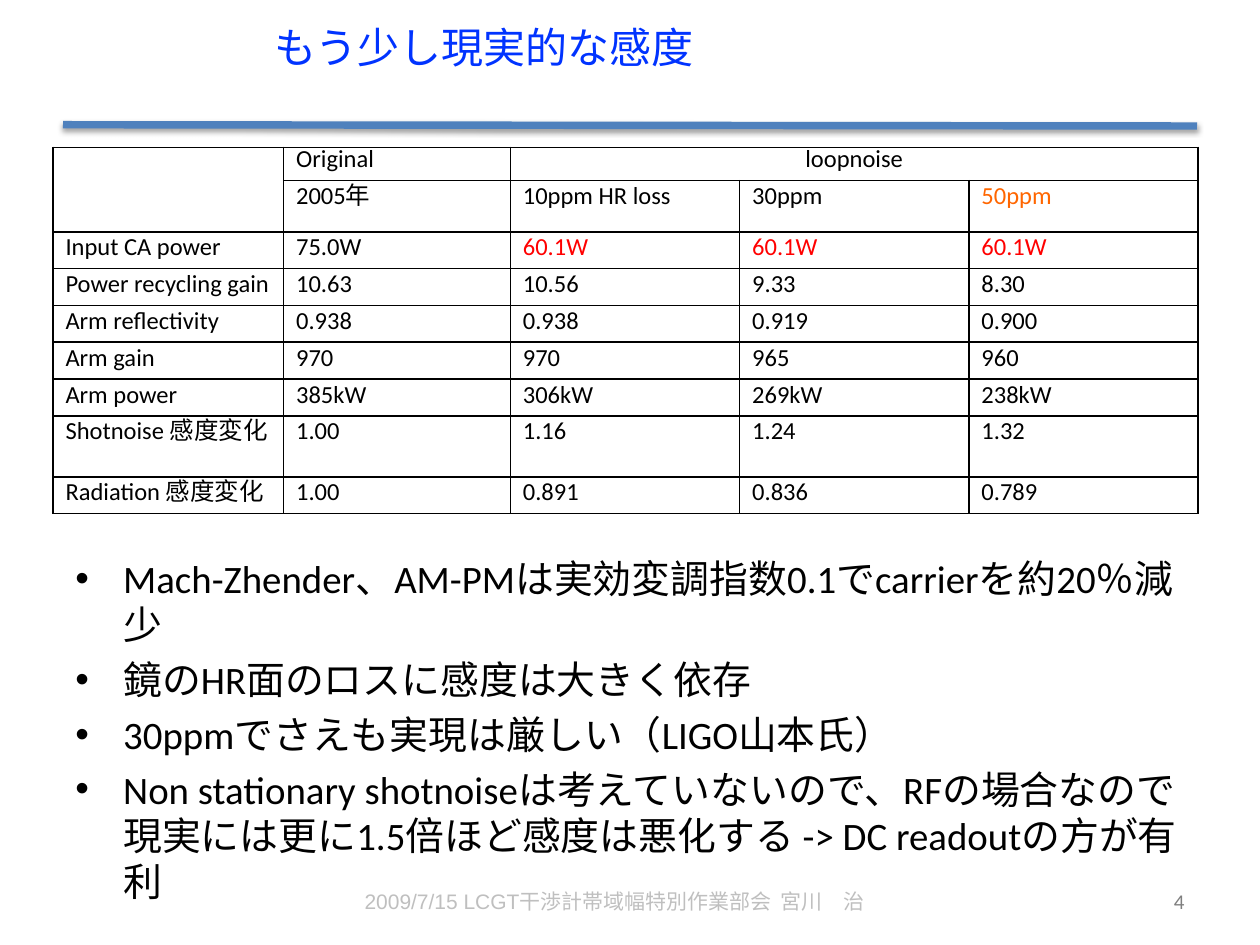
from lxml.etree import SubElement
from pptx import Presentation
from pptx.dml.color import RGBColor
from pptx.enum.text import MSO_ANCHOR as Anchor, PP_ALIGN as Align
from pptx.oxml import parse_xml
from pptx.oxml.ns import nsdecls, qn
from pptx.util import Inches, Pt


def rgb(value):
    return RGBColor.from_string(value)


def write(paragraph, text, size=14, font="Calibri", color="000000",
          align=Align.LEFT, line=None, before=0):
    paragraph.alignment = align
    paragraph.space_before = Pt(before)
    if line:
        paragraph.line_spacing = Pt(line)
    run = paragraph.add_run()
    run.text = text
    run.font.size = Pt(size)
    run.font.name = font
    run.font.color.rgb = rgb(color)


prs = Presentation()
prs.slide_width, prs.slide_height = Inches(10), Inches(7.5)
slide = prs.slides.add_slide(prs.slide_layouts[5])

# Title and rule
title = slide.shapes.title
title.left, title.top = Inches(2.08), Inches(0.17)
title.width, title.height = Inches(7.5), Inches(0.75)
title.text_frame.vertical_anchor = Anchor.TOP
title.text_frame.margin_top = 0
write(title.text_frame.paragraphs[0], "もう少し現実的な感度", size=24, color="0033FF")

rule = slide.shapes.add_connector(1, Inches(0.5), Inches(0.99), Inches(9.5), Inches(1))
rule.line.color.rgb = rgb("4F81BD")
rule.line.width = Pt(4.25)
rule._element.spPr.append(parse_xml(
    f'<a:effectLst {nsdecls("a")}>'
    f'<a:outerShdw blurRad="{Pt(3.1)}" dist="{Pt(1.6)}" dir="5400000" rotWithShape="0">'
    '<a:srgbClr val="000000"><a:alpha val="38000"/></a:srgbClr>'
    '</a:outerShdw></a:effectLst>'))

# Sensitivity table
rows = [
    ["", "Original", "loopnoise", "", ""],
    ["", "2005年", "10ppm HR loss", "30ppm", "50ppm"],
    ["Input CA power", "75.0W", "60.1W", "60.1W", "60.1W"],
    ["Power recycling gain", "10.63", "10.56", "9.33", "8.30"],
    ["Arm reflectivity", "0.938", "0.938", "0.919", "0.900"],
    ["Arm gain", "970", "970", "965", "960"],
    ["Arm power", "385kW", "306kW", "269kW", "238kW"],
    ["Shotnoise 感度変化", "1.00", "1.16", "1.24", "1.32"],
    ["Radiation 感度変化", "1.00", "0.891", "0.836", "0.789"],
]
column_widths = [1.83, 1.8, 1.82, 1.82, 1.82]
row_heights = [0.26, 0.33] + [0.29] * 5 + [0.48, 0.29]
text_colors = {"50ppm": "FF6600", "60.1W": "FF0000"}

sensitivity = slide.shapes.add_table(
    len(rows), len(column_widths), Inches(0.42), Inches(1.17),
    Inches(sum(column_widths)), Inches(sum(row_heights))).table
sensitivity.first_row = sensitivity.horz_banding = False
for column, width in zip(sensitivity.columns, column_widths):
    column.width = Inches(width)
for row, height in zip(sensitivity.rows, row_heights):
    row.height = Inches(height)
sensitivity.cell(0, 0).merge(sensitivity.cell(1, 0))
sensitivity.cell(0, 2).merge(sensitivity.cell(0, 4))

for r, row in enumerate(rows):
    for c, text in enumerate(row):
        cell = sensitivity.cell(r, c)
        if text:
            write(cell.text_frame.paragraphs[0], text,
                  color=text_colors.get(text, "000000"),
                  align=Align.CENTER if text == "loopnoise" else Align.LEFT,
                  line=13.8 if r else 11.8)
        properties = cell._tc.get_or_add_tcPr()
        for side in ("lnL", "lnR", "lnT", "lnB"):
            border = SubElement(properties, qn(f"a:{side}"), w=str(Pt(1)))
            fill = SubElement(border, qn("a:solidFill"))
            SubElement(fill, qn("a:srgbClr"), val="000000")
        cell.fill.background()

# Remarks
remarks = [
    "Mach-Zhender、AM-PMは実効変調指数0.1でcarrierを約20％減少",
    "鏡のHR面のロスに感度は大きく依存",
    "30ppmでさえも実現は厳しい（LIGO山本氏）",
    "Non stationary shotnoiseは考えていないので、RFの場合なので現実には更に1.5倍ほど"
    "感度は悪化する -> DC readoutの方が有利",
]
remarks_frame = slide.shapes.add_textbox(
    Inches(0.5), Inches(4.36), Inches(9), Inches(2.42)).text_frame
remarks_frame.word_wrap = True
for i, remark in enumerate(remarks):
    paragraph = remarks_frame.add_paragraph() if i else remarks_frame.paragraphs[0]
    indent = paragraph._p.get_or_add_pPr()
    indent.set("marL", str(Inches(0.38)))
    indent.set("indent", str(Inches(-0.38)))
    SubElement(indent, qn("a:buFont"), typeface="Arial")
    SubElement(indent, qn("a:buChar"), char="•")
    write(paragraph, remark, size=22.2, line=26.3, before=5 if i else 0)

# Footer and page number
footers = [
    (2.17, 5.42, "2009/7/15 LCGT干渉計帯域幅特別作業部会  宮川　治", "Arial", "BFBFBF", Align.CENTER),
    (7.58, 1.92, "4", "Calibri", "7F7F7F", Align.RIGHT),
]
for left, width, text, font, color, align in footers:
    footer_frame = slide.shapes.add_textbox(
        Inches(left), Inches(6.95), Inches(width), Inches(0.4)).text_frame
    footer_frame.word_wrap = True
    footer_frame.vertical_anchor = Anchor.MIDDLE
    write(footer_frame.paragraphs[0], text, size=12, font=font, color=color, align=align)

prs.save("out.pptx")
